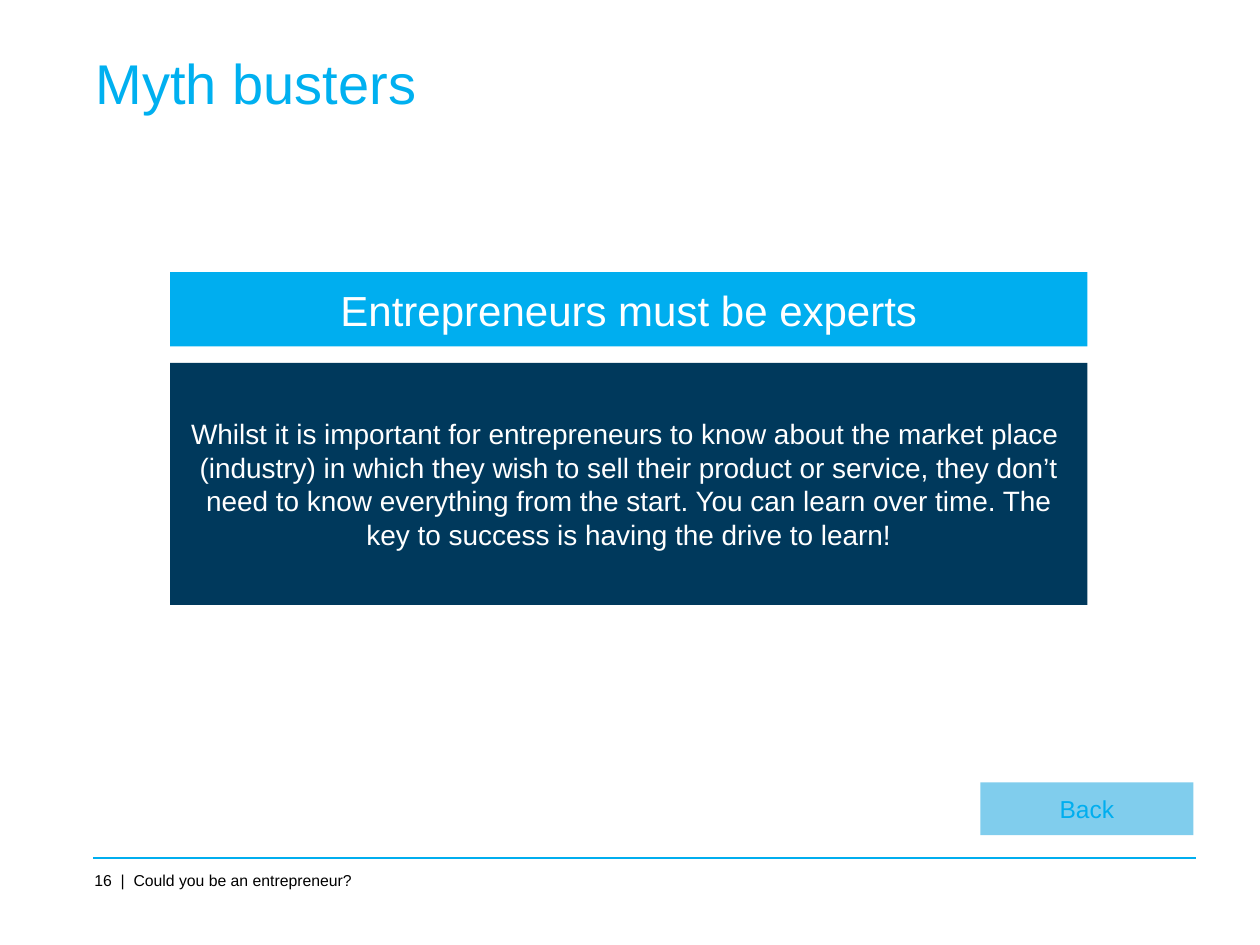
"""Build the "Myth busters" slide with its claim, answer and back button."""
import pptx
import pptx.util
import pptx.dml.color
import pptx.enum.shapes
import pptx.enum.text
import lxml.etree

Pt = pptx.util.Pt
RGBColor = pptx.dml.color.RGBColor
ALIGN = pptx.enum.text.PP_ALIGN
ANCHOR = pptx.enum.text.MSO_ANCHOR

CYAN = RGBColor(0x00, 0xAE, 0xEF)
TITLE_BLUE = RGBColor(0x00, 0xB0, 0xF0)
NAVY = RGBColor(0x00, 0x39, 0x5C)
PALE_BLUE = RGBColor(0x80, 0xCD, 0xED)
WHITE = RGBColor(0xFF, 0xFF, 0xFF)
BLACK = RGBColor(0x00, 0x00, 0x00)

TITLE = "Myth busters"
FOOTER = "16  |  Could you be an entrepreneur?"
CLAIM = "Entrepreneurs must be experts"
ANSWER = (
    "Whilst it is important for entrepreneurs to know about the market place  "
    "(industry) in which they wish to sell their product or service, they "
    "don’t need to know everything from the start. You can learn over time. "
    "The key to success is having the drive to learn!"
)
PANEL_LEFT, PANEL_WIDTH = 97.2, 524.2
BOXES = [
    (ANSWER, (PANEL_LEFT, 207.4, PANEL_WIDTH, 138.2), NAVY,
     dict(size=16, color=WHITE, inset=11.5)),
    ("Back", (560.2, 447.1, 121.7, 30.2), PALE_BLUE, dict(size=14, color=CYAN)),
    (CLAIM, (PANEL_LEFT, 155.5, PANEL_WIDTH, 42.5), CYAN,
     dict(size=24, color=WHITE)),
]
RULE_LEFT, RULE_RIGHT, RULE_TOP = 53.3, 683.3, 490.3


def write(sp, text, size, color, align=ALIGN.CENTER, anchor=ANCHOR.MIDDLE, inset=0):
    tf = sp.text_frame
    tf.word_wrap = True
    tf.auto_size = pptx.enum.text.MSO_AUTO_SIZE.NONE
    tf.vertical_anchor = anchor
    tf.margin_left = tf.margin_right = tf.margin_top = tf.margin_bottom = Pt(inset)
    p = tf.paragraphs[0]
    p.alignment = align
    r = p.add_run()
    r.text = text
    r.font.name = "Arial"
    r.font.size = Pt(size)
    r.font.color.rgb = color


def main():
    prs = pptx.Presentation()
    prs.slide_width, prs.slide_height = Pt(720), Pt(540)
    s = prs.slides.add_slide(prs.slide_layouts[5])

    rule = s.shapes.add_connector(
        pptx.enum.shapes.MSO_CONNECTOR.STRAIGHT,
        Pt(RULE_LEFT), Pt(RULE_TOP), Pt(RULE_RIGHT), Pt(RULE_TOP))
    rule.line.color.rgb = CYAN
    rule.line.width = Pt(1)
    lxml.etree.SubElement(rule._element.spPr, pptx.oxml.ns.qn("a:effectLst"))

    footer = s.shapes.add_textbox(Pt(54), Pt(497.5), Pt(228.2), Pt(10.8))
    write(footer, FOOTER, size=9, color=BLACK, align=ALIGN.LEFT, anchor=ANCHOR.BOTTOM)

    for text, bounds, fill, style in BOXES:
        sp = s.shapes.add_shape(
            pptx.enum.shapes.MSO_SHAPE.RECTANGLE, *map(Pt, bounds))
        sp.shadow.inherit = False
        sp.fill.solid()
        sp.fill.fore_color.rgb = fill
        sp.line.fill.background()
        write(sp, text, **style)

    title = s.shapes.title
    title.left, title.top, title.width, title.height = map(Pt, (54.7, 27.4, 635, 38.9))
    write(title, TITLE, size=32, color=TITLE_BLUE, align=ALIGN.LEFT)

    prs.save("out.pptx")


if __name__ == "__main__":
    main()
